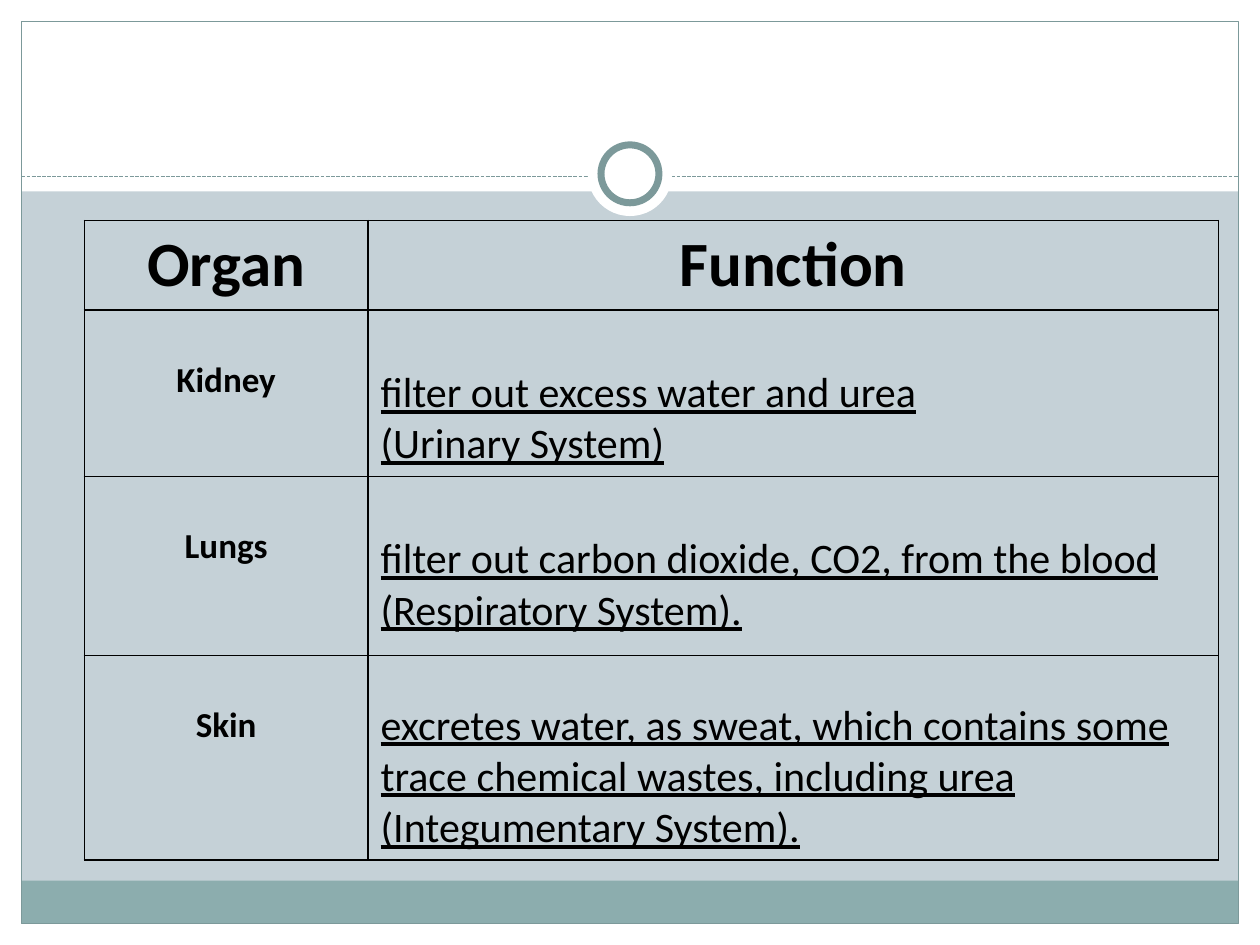
from dataclasses import dataclass

from lxml.etree import SubElement
from pptx import Presentation
from pptx.dml.color import RGBColor
from pptx.enum.dml import MSO_LINE
from pptx.enum.shapes import MSO_CONNECTOR, MSO_SHAPE
from pptx.enum.text import PP_ALIGN
from pptx.oxml.ns import qn
from pptx.util import Inches, Pt


@dataclass(frozen=True)
class Theme:
    background: str = "C5D1D7"
    white: str = "FFFFFF"
    band: str = "8CADAE"
    outline: str = "7C999A"
    ink: str = "000000"
    font: str = "Calibri"
    header_size: int = 36
    organ_size: int = 20
    function_size: int = 24
    hairline: float = 0.75
    ring_line: float = 4
    grid_line: float = 1


THEME = Theme()
HEADERS = ("Organ", "Function")
# Organ, function lines, size in points of the empty line above the function
ORGANS = [
    ("Kidney", ["filter out excess water and urea", "(Urinary System)"], 24),
    ("Lungs", ["filter out carbon dioxide, CO2, from the blood (Respiratory System)."], 24),
    ("Skin", ["excretes water, as sweat, which contains some trace chemical wastes, "
              "including urea (Integumentary System)."], 18),
]

WIDTH, HEIGHT = 10, 7.5
EDGE = 0.17
HEADER_HEIGHT = 1.52
BAND_HEIGHT = 0.34
RULE_Y = 1.4
RING_Y = 1.38
TABLE_LEFT, TABLE_TOP = 0.67, 1.75
COLUMN_WIDTHS = (2.25, 6.75)
ROW_HEIGHTS = (0.71, 1.3, 1.42, 1.6)
CELL_MARGIN = 0.05
LINE_SPACING = 1.22


def color(value):
    return RGBColor.from_string(value)


def add_panel(slide, kind, box, fill=None, line_width=None):
    panel = slide.shapes.add_shape(kind, *map(Inches, box))
    panel.shadow.inherit = False
    if fill:
        panel.fill.solid()
        panel.fill.fore_color.rgb = color(fill)
    else:
        panel.fill.background()
    if line_width:
        panel.line.color.rgb = color(THEME.outline)
        panel.line.width = Pt(line_width)
    else:
        panel.line.fill.background()


def add_frame(slide):
    """Draw the white margins, the bottom band, the outline and the ring."""
    inner_width, inner_height = WIDTH - 2 * EDGE, HEIGHT - 2 * EDGE
    margins = [
        (0, HEIGHT - EDGE, WIDTH, EDGE),
        (0, 0, WIDTH, HEADER_HEIGHT),
        (0, 0, EDGE, HEIGHT),
        (WIDTH - EDGE, 0, EDGE, HEIGHT),
    ]
    for box in margins:
        add_panel(slide, MSO_SHAPE.RECTANGLE, box, THEME.white)
    band = (EDGE, HEIGHT - EDGE - BAND_HEIGHT, inner_width, BAND_HEIGHT)
    add_panel(slide, MSO_SHAPE.RECTANGLE, band, THEME.band)
    add_panel(slide, MSO_SHAPE.RECTANGLE, (EDGE, EDGE, inner_width, inner_height),
              line_width=THEME.hairline)

    rule = slide.shapes.add_connector(
        MSO_CONNECTOR.STRAIGHT, Inches(EDGE), Inches(RULE_Y),
        Inches(WIDTH - EDGE), Inches(RULE_Y))
    rule.line.color.rgb = color(THEME.outline)
    rule.line.width = Pt(THEME.hairline)
    rule.line.dash_style = MSO_LINE.SQUARE_DOT
    SubElement(rule.element.spPr, qn("a:effectLst"))

    for diameter, line_width in ((0.67, None), (0.46, THEME.ring_line)):
        box = (WIDTH / 2 - diameter / 2, RING_Y - diameter / 2, diameter, diameter)
        add_panel(slide, MSO_SHAPE.OVAL, box, THEME.white, line_width)


def add_borders(cell):
    properties = cell._tc.get_or_add_tcPr()
    for side in ("lnL", "lnR", "lnT", "lnB"):
        border = SubElement(properties, qn(f"a:{side}"), w=str(Pt(THEME.grid_line)))
        fill = SubElement(border, qn("a:solidFill"))
        SubElement(fill, qn("a:srgbClr"), val=THEME.ink)


def fill_cell(cell, lines, size, heading=True, gap_size=0):
    """Write lines in a cell, lowered by one line of gap_size points."""
    add_borders(cell)
    cell.fill.background()
    cell.margin_top = Inches(CELL_MARGIN) + Pt(gap_size * LINE_SPACING)
    cell.text_frame.text = "\n".join(lines)
    for paragraph in cell.text_frame.paragraphs:
        paragraph.alignment = PP_ALIGN.CENTER if heading else PP_ALIGN.LEFT
        for run in paragraph.runs:
            run.font.name = THEME.font
            run.font.size = Pt(size)
            run.font.bold = heading
            run.font.underline = not heading
            run.font.color.rgb = color(THEME.ink)


def add_organ_table(slide):
    table = slide.shapes.add_table(
        len(ROW_HEIGHTS), len(COLUMN_WIDTHS), Inches(TABLE_LEFT), Inches(TABLE_TOP),
        Inches(sum(COLUMN_WIDTHS)), Inches(sum(ROW_HEIGHTS))).table
    table.first_row = table.horz_banding = False
    for column, width in zip(table.columns, COLUMN_WIDTHS):
        column.width = Inches(width)
    for row, height in zip(table.rows, ROW_HEIGHTS):
        row.height = Inches(height)

    for column, header in enumerate(HEADERS):
        fill_cell(table.cell(0, column), [header], THEME.header_size)
    for row, (organ, function, gap_size) in enumerate(ORGANS, start=1):
        fill_cell(table.cell(row, 0), [organ], THEME.organ_size, gap_size=THEME.organ_size)
        fill_cell(table.cell(row, 1), function, THEME.function_size,
                  heading=False, gap_size=gap_size)


def main():
    presentation = Presentation()
    presentation.slide_width = Inches(WIDTH)
    presentation.slide_height = Inches(HEIGHT)
    slide = presentation.slides.add_slide(presentation.slide_layouts[6])
    slide.background.fill.solid()
    slide.background.fill.fore_color.rgb = color(THEME.background)
    add_frame(slide)
    add_organ_table(slide)
    presentation.save("out.pptx")


if __name__ == "__main__":
    main()
